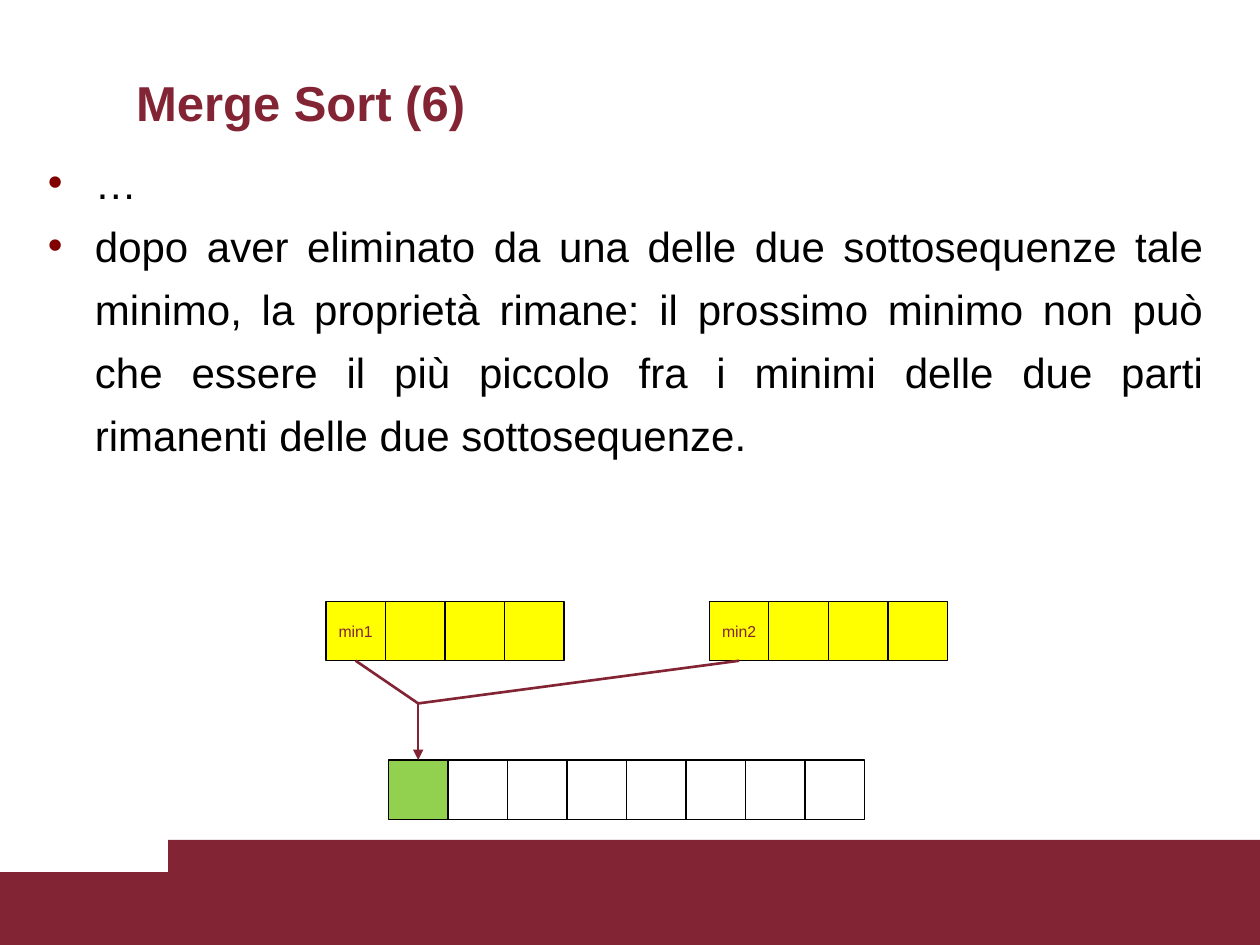
from dataclasses import dataclass

from lxml.etree import SubElement
from pptx import Presentation
from pptx.dml.color import RGBColor
from pptx.enum.shapes import MSO_CONNECTOR, MSO_SHAPE
from pptx.enum.text import MSO_ANCHOR, MSO_AUTO_SIZE, PP_ALIGN
from pptx.oxml.ns import qn
from pptx.util import Cm, Pt

MAROON = RGBColor(0x82, 0x24, 0x33)
BULLET_RED = RGBColor(0x80, 0x00, 0x00)
YELLOW = RGBColor(0xFF, 0xFF, 0x00)
GREEN = RGBColor(0x92, 0xD0, 0x50)
BLACK = RGBColor(0x00, 0x00, 0x00)

FONT = "Arial"
CELL = 1.2  # side of an array cell, in cm
JUNCTION = (8.43, 14.18)  # where the two minima meet, in cm

BULLETS = [
    "…",
    "dopo aver eliminato da una delle due sottosequenze tale minimo, "
    "la proprietà rimane: il prossimo minimo non può che essere il più "
    "piccolo fra i minimi delle due parti rimanenti delle due sottosequenze.",
]


@dataclass
class Band:
    left: float
    top: float
    width: float
    height: float


@dataclass
class Array:
    left: float
    top: float
    fills: list
    label: str = ""


BANDS = [Band(0, 17.58, 25.4, 1.47), Band(3.39, 16.93, 22.01, 2.12)]
FIRST_HALF = Array(6.57, 12.12, [YELLOW] * 4, "min1")
SECOND_HALF = Array(14.3, 12.12, [YELLOW] * 4, "min2")
MERGED = Array(7.83, 15.32, [GREEN] + [None] * 7)


def add_run(paragraph, text: str, size: float, color: RGBColor, bold: bool = False):
    run = paragraph.add_run()
    run.text = text
    run.font.name = FONT
    run.font.size = Pt(size)
    run.font.bold = bold
    run.font.color.rgb = color


def place(shape, left: float, top: float, width: float, height: float):
    shape.left, shape.top = Cm(left), Cm(top)
    shape.width, shape.height = Cm(width), Cm(height)


def add_band(slide, band: Band):
    shape = slide.shapes.add_shape(
        MSO_SHAPE.RECTANGLE, Cm(band.left), Cm(band.top), Cm(band.width), Cm(band.height)
    )
    shape.shadow.inherit = False
    shape.fill.solid()
    shape.fill.fore_color.rgb = MAROON
    shape.line.fill.background()


def fill_title(title):
    place(title, 2.49, 1.35, 21, 1.4)
    frame = title.text_frame
    frame.auto_size = MSO_AUTO_SIZE.NONE
    frame.vertical_anchor = MSO_ANCHOR.MIDDLE
    paragraph = frame.paragraphs[0]
    paragraph.alignment = PP_ALIGN.LEFT
    add_run(paragraph, "Merge Sort (6)", 28, MAROON, bold=True)


def set_bullet(paragraph):
    properties = paragraph._p.get_or_add_pPr()
    properties.set("marL", str(Cm(0.95)))
    properties.set("indent", str(-Cm(0.95)))
    bullet_color = SubElement(properties, qn("a:buClr"))
    SubElement(bullet_color, qn("a:srgbClr")).set("val", str(BULLET_RED))
    SubElement(properties, qn("a:buFont")).set("typeface", FONT)
    SubElement(properties, qn("a:buChar")).set("char", "•")


def fill_body(body):
    place(body, 0.71, 2.79, 23.8, 7.92)
    frame = body.text_frame
    frame.auto_size = MSO_AUTO_SIZE.NONE
    for index, text in enumerate(BULLETS):
        paragraph = frame.add_paragraph() if index else frame.paragraphs[0]
        paragraph.alignment = PP_ALIGN.JUSTIFY
        paragraph.line_spacing = 1.25
        paragraph.space_before = Pt(0)
        set_bullet(paragraph)
        add_run(paragraph, text, 24, BLACK)


def add_array(slide, array: Array):
    """Draw a row of cells and return its first cell."""
    cells = []
    for index, fill in enumerate(array.fills):
        cell = slide.shapes.add_shape(
            MSO_SHAPE.RECTANGLE, Cm(array.left + index * CELL), Cm(array.top), Cm(CELL), Cm(CELL)
        )
        cell.shadow.inherit = False
        cell.line.color.rgb = BLACK
        cell.line.width = Pt(0.75)
        if fill is None:
            cell.fill.background()
        else:
            cell.fill.solid()
            cell.fill.fore_color.rgb = fill
        cells.append(cell)
    if array.label:
        frame = cells[0].text_frame
        frame.margin_left = frame.margin_right = 0
        frame.vertical_anchor = MSO_ANCHOR.MIDDLE
        paragraph = frame.paragraphs[0]
        paragraph.alignment = PP_ALIGN.CENTER
        add_run(paragraph, array.label, 9, MAROON)
    return cells[0]


def add_line(slide):
    """Draw a line that starts and ends at the junction, ready to be joined to a cell."""
    x, y = (Cm(length) for length in JUNCTION)
    line = slide.shapes.add_connector(MSO_CONNECTOR.STRAIGHT, x, y, x, y)
    line.line.color.rgb = MAROON
    line.line.width = Pt(1.5)
    return line


def remove_shadow(line):
    SubElement(line._element.spPr, qn("a:effectLst"))


def main():
    presentation = Presentation()
    presentation.slide_width, presentation.slide_height = Cm(25.4), Cm(19.05)
    slide = presentation.slides.add_slide(presentation.slide_layouts[1])

    # Footer bands
    for band in BANDS:
        add_band(slide, band)

    # Title and list
    fill_title(slide.shapes.title)
    fill_body(slide.placeholders[1])

    # Two sorted halves and the merged array
    minimum_cells = [add_array(slide, array) for array in (FIRST_HALF, SECOND_HALF)]
    target_cell = add_array(slide, MERGED)

    # Lines from both minima, and the arrow into the merged array
    for cell in minimum_cells:
        line = add_line(slide)
        line.begin_connect(cell, 2)
        remove_shadow(line)
    arrow = add_line(slide)
    arrow.end_connect(target_cell, 0)
    SubElement(arrow.line._get_or_add_ln(), qn("a:tailEnd")).set("type", "triangle")
    remove_shadow(arrow)

    presentation.save("out.pptx")


if __name__ == "__main__":
    main()
